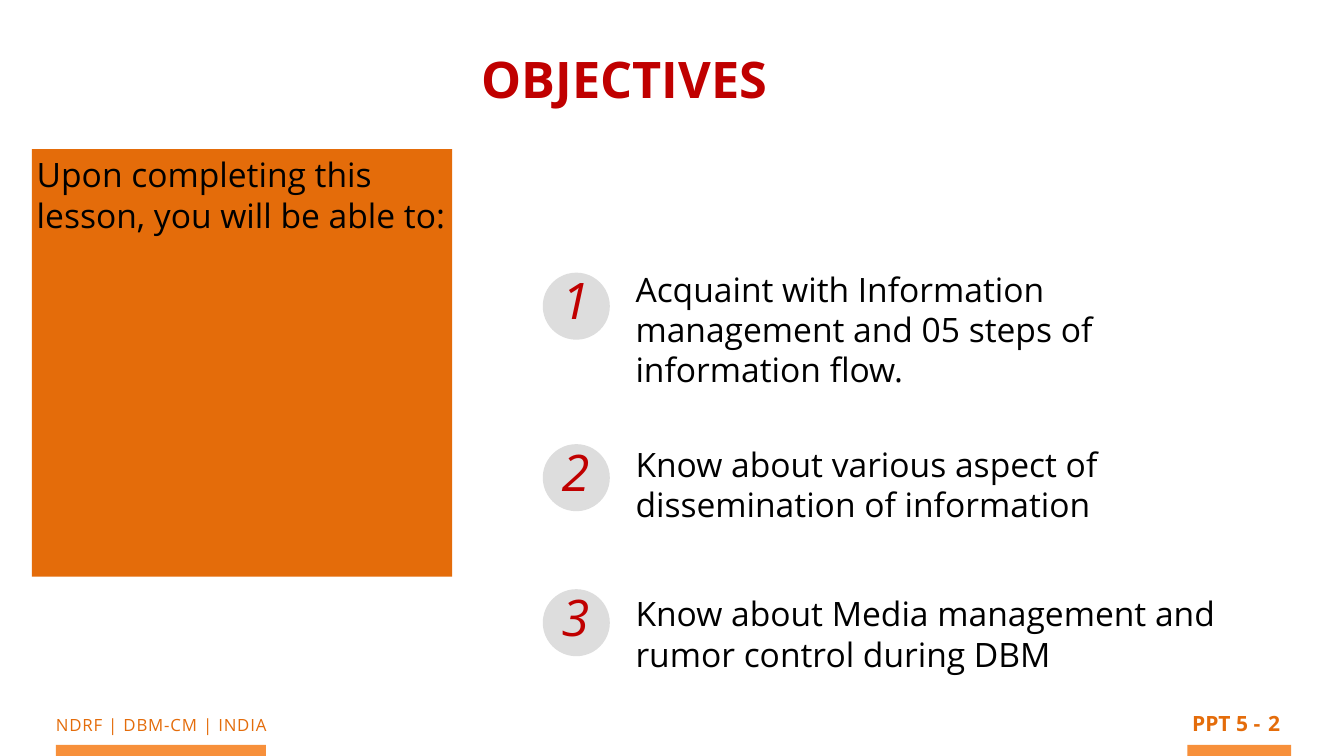
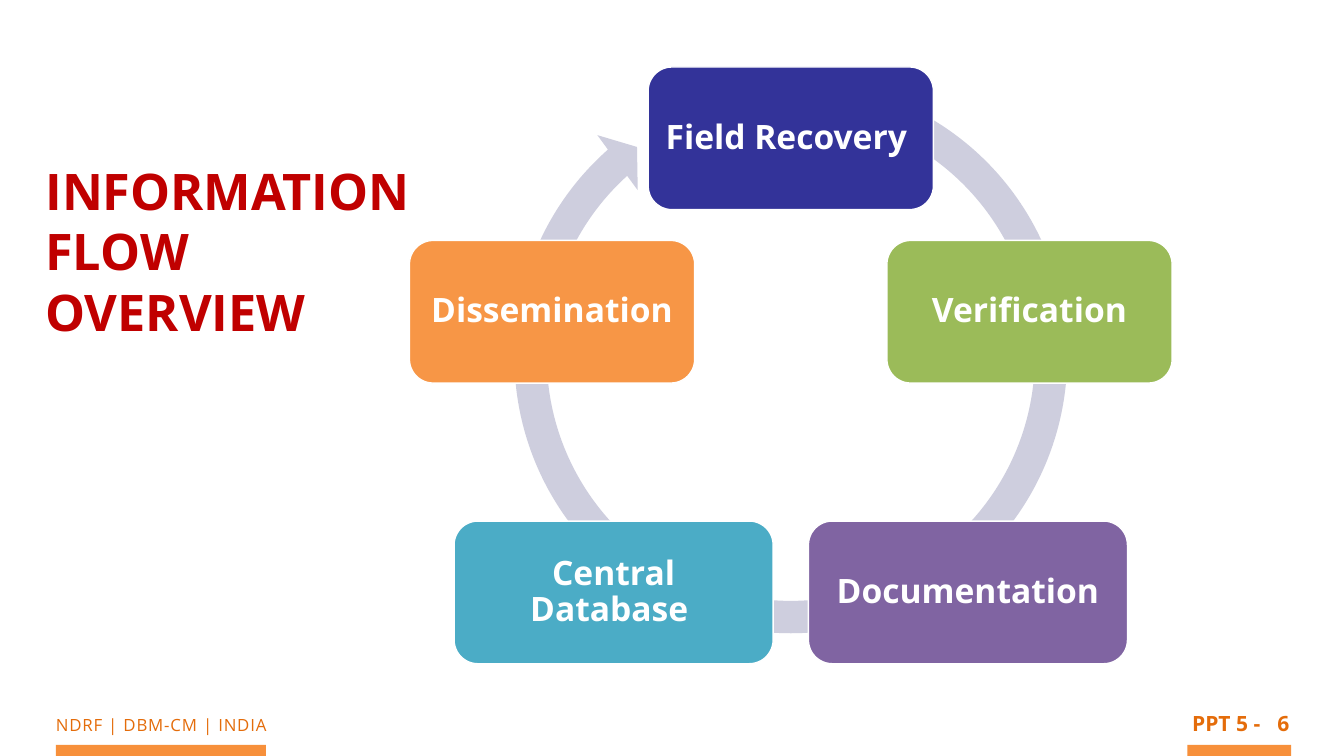
"""Builds the objectives and information flow slides of the information management lesson."""
import math

from pptx import Presentation
from pptx.dml.color import RGBColor
from pptx.enum import shapes, text
from pptx.util import Pt

COLOURS = {
    "title": "C00000", "orange": "E46C0A", "bar": "F7903B", "body": "000000",
    "disc": "DDDDDD", "ring": "CECEDE", "white": "FFFFFF", "recovery": "333399",
    "verification": "9BBB59", "documentation": "8064A2", "database": "4BACC6",
    "dissemination": "F79646",
}
FONT = "Open Sans"
SHAPE = shapes.MSO_SHAPE


def write(shape, *paragraphs, size=48, colour="body", bold=False, italic=False,
          align=text.PP_ALIGN.LEFT, anchor=text.MSO_ANCHOR.TOP, inset=6.5,
          wrap=True, gaps=(0,), line_spacing=1.0, tracking=None):
    frame = shape.text_frame
    frame.auto_size = text.MSO_AUTO_SIZE.NONE
    frame.word_wrap = wrap
    frame.vertical_anchor = anchor
    frame.margin_left = frame.margin_right = Pt(inset)
    frame.margin_top = frame.margin_bottom = Pt(inset)
    frame.text = "\n".join(paragraphs)
    for paragraph, gap in zip(frame.paragraphs, gaps):
        properties = paragraph._p.get_or_add_pPr()
        properties.set("marL", "0")
        properties.set("indent", "0")
        paragraph.alignment = align
        paragraph.line_spacing = line_spacing
        paragraph.space_before = Pt(gap)
        if shape.is_placeholder:
            properties.append(properties.makeelement(
                "{http://schemas.openxmlformats.org/drawingml/2006/main}buNone", {}))
        run = paragraph.runs[0]
        run.font.name = FONT
        run.font.size = Pt(size)
        run.font.bold = bold
        run.font.italic = italic
        run.font.color.rgb = RGBColor.from_string(COLOURS[colour])
        if tracking:
            run._r.get_or_add_rPr().set("spc", str(tracking))


def draw(slide, kind, left, top, width, height, fill, outline=None):
    shape = slide.shapes.add_shape(kind, Pt(left), Pt(top), Pt(width), Pt(height))
    shape.shadow.inherit = False
    shape.fill.solid()
    shape.fill.fore_color.rgb = RGBColor.from_string(COLOURS[fill])
    if outline:
        shape.line.color.rgb = RGBColor.from_string(COLOURS[outline])
        shape.line.width = Pt(2)
    else:
        shape.line.fill.background()
    return shape


deck = Presentation()
deck.slide_width, deck.slide_height = Pt(1920), Pt(1080)
objectives = deck.slides.add_slide(deck.slide_layouts[1])
flow = deck.slides.add_slide(deck.slide_layouts[5])

for slide, number, number_width in ((objectives, "2", 30), (flow, "6", 57)):
    for left, width in ((80, 300), (1696.3, 148.3)):
        draw(slide, SHAPE.RECTANGLE, left, 1064.2, width, 15.8, "bar")
    course = slide.shapes.add_textbox(Pt(47.5), Pt(1013.8), Pt(365.8), Pt(41.8))
    write(course, "NDRF | DBM-CM | INDIA", size=24, colour="orange",
          align=text.PP_ALIGN.CENTER, tracking=120)
    for content, left, width in (("PPT 5 -", 1696.3, 111), (number, 1805, number_width)):
        page = slide.shapes.add_textbox(Pt(left), Pt(1008.7), Pt(width), Pt(50))
        write(page, content, size=30, colour="orange", bold=True,
              align=text.PP_ALIGN.CENTER, wrap=content == number)

for slide, heading, left, top, width, height, wrap in (
        (objectives, "OBJECTIVES", 681.8, 62, 421.2, 110, False),
        (flow, "INFORMATION FLOW OVERVIEW", 58.3, 221.8, 600, 274.3, True)):
    title = slide.shapes.title
    title.left, title.top, title.width, title.height = Pt(left), Pt(top), Pt(width), Pt(height)
    write(title, heading, size=72, colour="title", bold=True, wrap=wrap)

intro = draw(objectives, SHAPE.RECTANGLE, 45.4, 213, 600.5, 610.6, "orange")
write(intro, "Upon completing this lesson, you will be able to:", inset=7.2)

goals = objectives.placeholders[1]
goals.left, goals.top, goals.width, goals.height = Pt(901.4), Pt(377.3), Pt(902.9), Pt(597)
write(goals, "Acquaint with Information management and 05 steps of information flow.",
      "Know about various aspect of dissemination of information",
      "Know about Media management and rumor control during DBM", gaps=(0, 77.5, 98))

for order, top in enumerate((389.5, 634.5, 841.7), 1):
    draw(objectives, SHAPE.OVAL, 775.4, top, 95.8, 95.8, "disc")
    numeral = objectives.shapes.add_textbox(Pt(796), Pt(top - 11.5), Pt(64.8), Pt(132.5))
    write(numeral, str(order), size=72, colour="title", italic=True)

ring = draw(flow, SHAPE.CIRCULAR_ARROW, 709.2, 89.3, 841, 841, "ring")
for index, value in enumerate((0.055, 3.307, 136.955, 174.351, 0.058)):
    ring.adjustments[index] = value

centre_x, centre_y, radius, step_height = 1129.7, 556.2, 358.6, 203.8
steps = (
    ("Field Recovery ", "recovery", 407.5, 0),
    ("Verification", "verification", 407.5, 0),
    ("Documentation", "documentation", 455.8, 42.3),
    ("Central Database ", "database", 455.8, -42.3),
    ("Dissemination", "dissemination", 407.5, 0),
)
for index, (label, colour, width, shift) in enumerate(steps):
    angle = math.tau * index / len(steps)
    left = centre_x + radius * math.sin(angle) + shift - width / 2
    top = centre_y - radius * math.cos(angle) - step_height / 2
    step = draw(flow, SHAPE.ROUNDED_RECTANGLE, left, top, width, step_height, colour, "white")
    write(step, label, colour="white", bold=True, align=text.PP_ALIGN.CENTER,
          anchor=text.MSO_ANCHOR.MIDDLE, inset=14.4, line_spacing=0.9)

deck.save("out.pptx")
